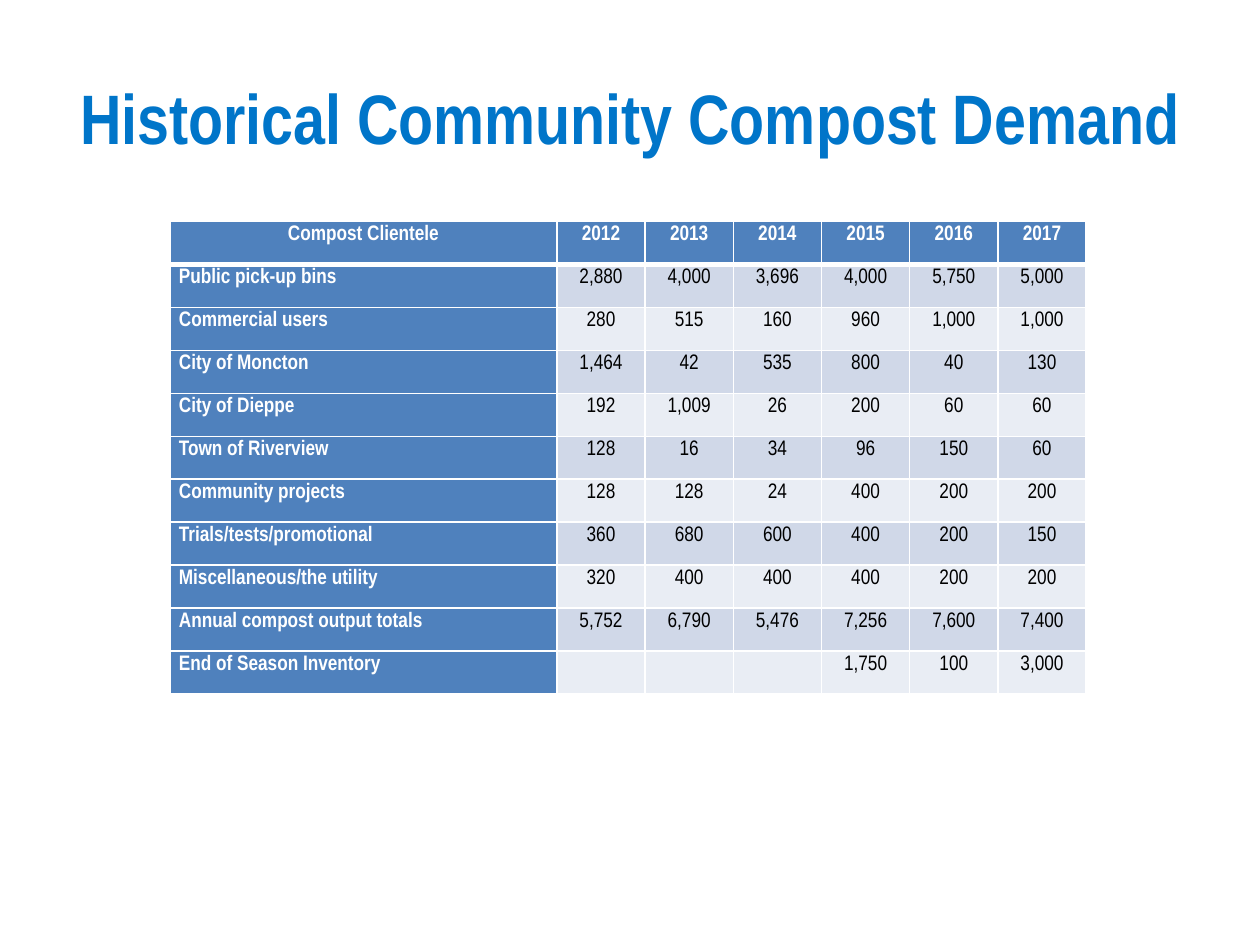
from dataclasses import dataclass

from lxml import etree
from pptx import Presentation
from pptx.dml.color import RGBColor
from pptx.enum.text import MSO_ANCHOR, PP_ALIGN
from pptx.oxml.ns import qn
from pptx.util import Inches, Pt

CENTER, LEFT = PP_ALIGN.CENTER, PP_ALIGN.LEFT
MIDDLE = MSO_ANCHOR.MIDDLE


@dataclass(frozen=True)
class Theme:
    font: str = "Arial Narrow"
    title_size: int = 40
    table_size: int = 12
    title: str = "0075C9"
    header: str = "4F81BD"
    header_text: str = "FFFFFF"
    body_text: str = "000000"
    bands: tuple = ("E9EDF4", "D0D8E8")
    border: str = "FFFFFF"


theme = Theme()

ROWS = [
    ["Compost Clientele", "2012", "2013", "2014", "2015", "2016", "2017"],
    ["Public pick-up bins", "2,880", "4,000", "3,696", "4,000", "5,750", "5,000"],
    ["Commercial users", "280", "515", "160", "960", "1,000", "1,000"],
    ["City of Moncton", "1,464", "42", "535", "800", "40", "130"],
    ["City of Dieppe", "192", "1,009", "26", "200", "60", "60"],
    ["Town of Riverview", "128", "16", "34", "96", "150", "60"],
    ["Community projects", "128", "128", "24", "400", "200", "200"],
    ["Trials/tests/promotional", "360", "680", "600", "400", "200", "150"],
    ["Miscellaneous/the utility", "320", "400", "400", "400", "200", "200"],
    ["Annual compost output totals", "5,752", "6,790", "5,476", "7,256", "7,600", "7,400"],
    ["End of Season Inventory", "", "", "", "1,750", "100", "3,000"],
]


def style_paragraph(paragraph, size, color, bold, alignment):
    paragraph.alignment = alignment
    paragraph.font.name = theme.font
    paragraph.font.size = Pt(size)
    paragraph.font.bold = bold
    paragraph.font.color.rgb = RGBColor.from_string(color)


def add_border(cell, side, width):
    properties = cell._tc.get_or_add_tcPr()
    line = etree.SubElement(properties, qn(f"a:ln{side}"), w=str(Pt(width)))
    fill = etree.SubElement(line, qn("a:solidFill"))
    etree.SubElement(fill, qn("a:srgbClr"), val=theme.border)


deck = Presentation()
deck.slide_width, deck.slide_height = Inches(10), Inches(7.5)
page = deck.slides.add_slide(deck.slide_layouts[6])

# Title
title_box = page.shapes.add_textbox(Inches(0.5), Inches(0.3), Inches(9), Inches(1.25))
title_frame = title_box.text_frame
title_frame.word_wrap = True
title_frame.vertical_anchor = MIDDLE
title_frame.text = "Historical Community Compost Demand"
style_paragraph(title_frame.paragraphs[0], theme.title_size, theme.title, True, CENTER)

# Demand table
table = page.shapes.add_table(
    len(ROWS), len(ROWS[0]), Inches(1.35), Inches(1.76), Inches(7.25), Inches(3.75)
).table
for index, column in enumerate(table.columns):
    column.width = Inches(0.7 if index else 3.07)
for row in table.rows:
    row.height = Inches(3.75) // len(ROWS)

for row_index, values in enumerate(ROWS):
    for column_index, value in enumerate(values):
        cell = table.cell(row_index, column_index)
        is_header = row_index == 0 or column_index == 0
        cell.margin_left = cell.margin_right = Inches(0.07)
        cell.margin_top = cell.margin_bottom = 0

        # Thick rule under the header row, thin rules elsewhere
        add_border(cell, "L", 1)
        add_border(cell, "R", 1)
        add_border(cell, "T", 3 if row_index == 1 else 1)
        add_border(cell, "B", 3 if row_index == 0 else 1)
        cell.fill.solid()
        cell.fill.fore_color.rgb = RGBColor.from_string(
            theme.header if is_header else theme.bands[row_index % 2]
        )

        if value:
            cell.text = value
            paragraph = cell.text_frame.paragraphs[0]
            paragraph.line_spacing = 1.2
            style_paragraph(
                paragraph,
                theme.table_size,
                theme.header_text if is_header else theme.body_text,
                is_header,
                LEFT if row_index and column_index == 0 else CENTER,
            )

deck.save("out.pptx")
